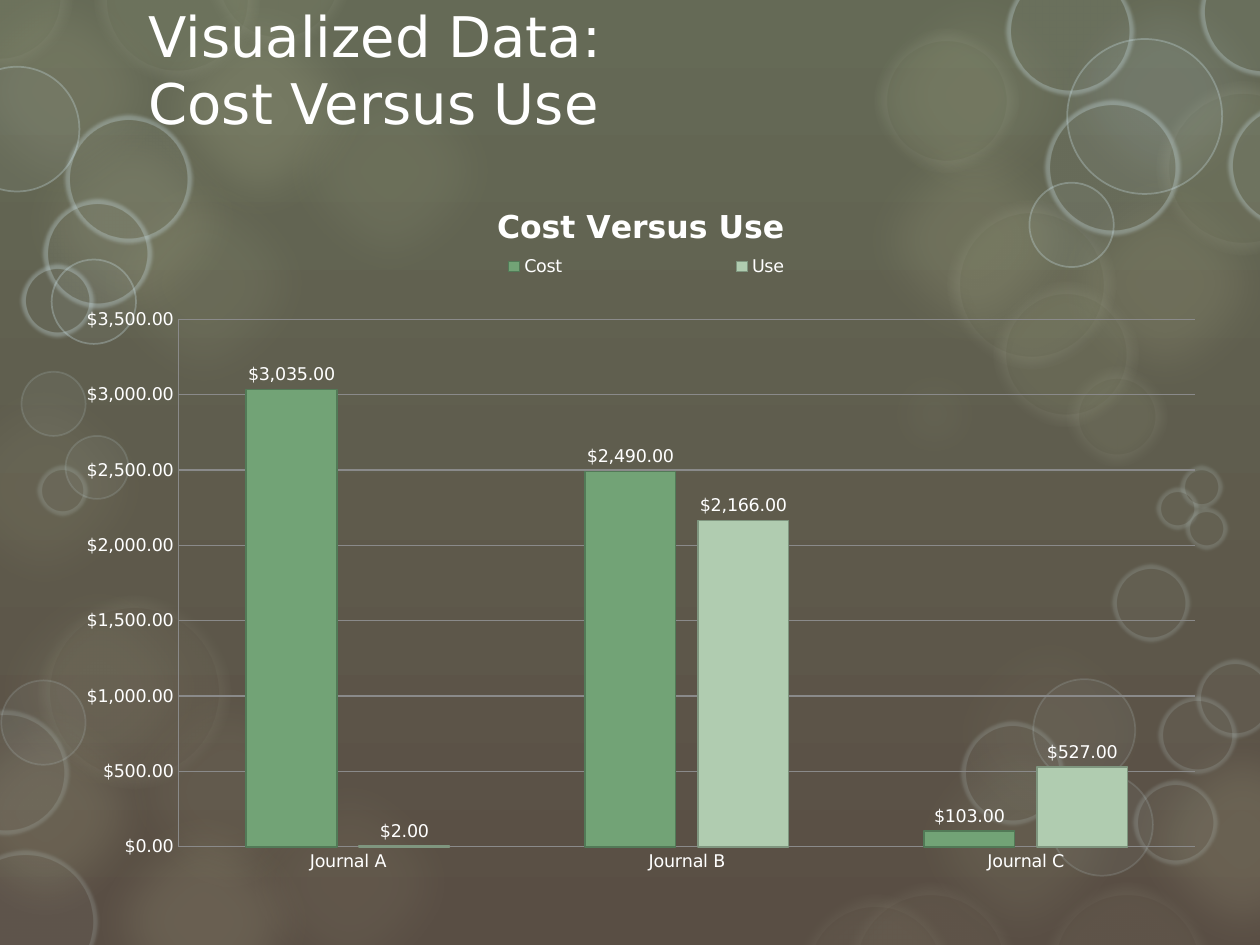
from lxml import etree
from pptx import Presentation
from pptx.chart.data import CategoryChartData
from pptx.dml.color import RGBColor
from pptx.enum.chart import XL_CHART_TYPE, XL_LABEL_POSITION, XL_LEGEND_POSITION, XL_TICK_MARK
from pptx.enum.shapes import MSO_SHAPE
from pptx.enum.text import MSO_ANCHOR, MSO_AUTO_SIZE, PP_ALIGN
from pptx.oxml.ns import qn
from pptx.util import Cm, Pt

COLUMNS = XL_CHART_TYPE.COLUMN_CLUSTERED
OUTSIDE_END = XL_LABEL_POSITION.OUTSIDE_END
LEGEND_TOP = XL_LEGEND_POSITION.TOP
NO_TICK = XL_TICK_MARK.NONE
ELLIPSE = MSO_SHAPE.OVAL
MIDDLE = MSO_ANCHOR.MIDDLE
LEFT = PP_ALIGN.LEFT
NO_AUTOFIT = MSO_AUTO_SIZE.NONE

FONT = "DejaVu Sans"
MONEY = '"$"#,##0.00'
COLORS = {
    "top": "656A56", "bottom": "594E44", "text": "FFFFFF", "grid": "8A8A8A",
    "olive": "BDC097", "ice": "CBE1E7", "pale": "F2F3EB",
    "cost": "72A376", "cost_edge": "527A57", "use": "B0CCB0", "use_edge": "7F967F",
}
TITLE_LINES = ["Visualized Data:", "Cost Versus Use"]
TITLE_BOX = (1.08, 0.04, 7.79, 1.01)
CHART_TITLE = "Cost Versus Use"
CHART_BOX = (0.5, 1.42, 9.17, 5.58)
CATEGORIES = ["Journal A", "Journal B", "Journal C"]
SERIES = [
    ("Cost", (3035, 2490, 103), "cost", "cost_edge"),
    ("Use", (2, 2166, 527), "use", "use_edge"),
]
PLOT_LAYOUT = {"x": 0.1, "y": 0.2, "w": 0.88, "h": 0.75}
LEGEND_LAYOUT = {"x": 0.24, "y": 0.1, "w": 0.53, "h": 0.05}

STYLES = {
    "glow": {"line": None, "width": 0, "softness": 25},
    "haze": {"line": "pale", "width": 14, "softness": 9},
    "ring": {"line": "ice", "width": 1, "softness": 0},
    "blur": {"line": "ice", "width": 5, "softness": 2},
}
BUBBLES = [
    ("glow", "olive", 8, 0, [
        (-0.26, 4.42, 2.09), (0.77, 5.24, 2.09), (1.73, 5.96, 2.09), (-0.7, 2.82, 2.09)]),
    ("glow", "olive", 10, 0, [
        (0.57, 1.2, 2.09), (2.05, 0.31, 2.09), (6.69, -0.29, 2.09), (7.06, 5.62, 2.09),
        (6.75, 2.62, 1.33)]),
    ("glow", "olive", 16, 0, [(0.57, 6.27, 2.09), (8.81, 5.62, 2.09), (-0.69, 5.41, 2.09)]),
    ("glow", "olive", 14, 0, [(-0.56, -0.32, 2.09)]),
    ("glow", "olive", 20, 0, [(1.01, -0.18, 2.09)]),
    ("glow", "olive", 15, 0, [(0, 0.72, 2.09), (8.2, 1.2, 2.09), (6.69, 0.86, 2.09)]),
    ("glow", "ice", 10, 0, [(8.2, -0.32, 2.09)]),
    ("glow", "olive", 5, 0, [(7.29, 4.77, 2.09)]),
    ("haze", "olive", 10, 6, [
        (9.18, 0.65, 1.37), (6.94, 0.23, 1.14), (7.52, 1.59, 1.33), (7.89, 2.24, 1.14),
        (8.47, 2.91, 0.79), (0.75, -0.66, 1.31), (1.64, -0.75, 1.14), (-0.57, -0.58, 1.14)]),
    ("haze", "olive", 6, 4, [
        (0.3, 4.73, 1.53), (6.32, 7.1, 1.25), (6.7, 7.01, 1.37), (8.28, 7.01, 1.33)]),
    ("ring", "ice", 5, 15, [
        (0.01, 5.4, 0.67), (8.34, 6.14, 0.81), (8.2, 5.39, 0.81), (0.17, 2.95, 0.51),
        (0.52, 3.46, 0.5)]),
    ("blur", "ice", 5, 15, [
        (-0.36, 6.75, 1.13), (-0.44, 5.64, 0.98), (7.63, 5.73, 0.81), (9, 6.2, 0.66),
        (8.83, 4.48, 0.61), (9.2, 5.53, 0.61), (9.5, 5.24, 0.61), (9.37, 3.7, 0.33),
        (9.18, 3.87, 0.33), (9.41, 4.03, 0.33), (0.3, 3.7, 0.39)]),
    ("ring", "ice", 5, 30, [
        (-0.36, 0.53, 0.99), (0.41, 2.06, 0.67), (8.47, 0.31, 1.23), (8.17, 1.45, 0.67)]),
    ("blur", "ice", 5, 30, [
        (0.52, 0.92, 1), (0.35, 1.59, 0.85), (0.17, 2.1, 0.57), (7.99, -0.25, 1),
        (9.53, -0.4, 1), (9.75, 0.82, 0.99), (8.3, 0.8, 1.06)]),
]


def length(inches):
    return Cm(inches * 2.54)


def color(name):
    return RGBColor.from_string(COLORS[name])


def paint(fill, name, opacity=100):
    fill.solid()
    fill.fore_color.rgb = color(name)
    if opacity < 100:
        choice = fill._xPr.find(qn("a:solidFill"))[0]
        etree.SubElement(choice, qn("a:alpha"), val=str(opacity * 1000))


def add_bubble(shapes, circle, look, fill, opacity, line_opacity):
    left, top, diameter = map(length, circle)
    shape = shapes.add_shape(ELLIPSE, left, top, diameter, diameter)
    paint(shape.fill, fill, opacity)
    if look["line"]:
        shape.line.width = Pt(look["width"])
        paint(shape.line.fill, look["line"], line_opacity)
    else:
        shape.line.fill.background()
    shape.shadow.inherit = False
    if look["softness"]:
        effects = shape.element.spPr.find(qn("a:effectLst"))
        etree.SubElement(effects, qn("a:softEdge"), rad=str(Pt(look["softness"])))


def style(font, size, bold=False):
    font.name = FONT
    font.size = Pt(size)
    font.bold = bold
    font.color.rgb = color("text")


def format_title(title):
    title.left, title.top, title.width, title.height = map(length, TITLE_BOX)
    frame = title.text_frame
    frame.word_wrap = True
    frame.auto_size = NO_AUTOFIT
    frame.vertical_anchor = MIDDLE
    paragraph = frame.paragraphs[0]
    paragraph.alignment = LEFT
    for index, line in enumerate(TITLE_LINES):
        if index:
            paragraph.add_line_break()
        run = paragraph.add_run()
        run.text = line
        style(run.font, 32)


def set_layout(element, fractions, inner=False):
    layout = element.find(qn("c:layout"))
    if layout is None:
        layout = etree.Element(qn("c:layout"))
        element.insert(1 if element.tag == qn("c:legend") else 0, layout)
    manual = etree.SubElement(layout, qn("c:manualLayout"))
    if inner:
        etree.SubElement(manual, qn("c:layoutTarget"), val="inner")
    for side in "xy":
        etree.SubElement(manual, qn(f"c:{side}Mode"), val="edge")
    for side, value in fractions.items():
        etree.SubElement(manual, qn(f"c:{side}"), val=str(value))


def add_cost_chart(shapes):
    data = CategoryChartData(number_format=MONEY)
    data.categories = CATEGORIES
    for name, values, _, _ in SERIES:
        data.add_series(name, values)
    chart = shapes.add_chart(COLUMNS, *map(length, CHART_BOX), data).chart
    style(chart.font, 10)
    chart.has_title = True
    run = chart.chart_title.text_frame.paragraphs[0].add_run()
    run.text = CHART_TITLE
    style(run.font, 18, True)
    chart.has_legend = True
    chart.legend.position = LEGEND_TOP
    chart.legend.include_in_layout = False
    set_layout(chart.legend._element, LEGEND_LAYOUT)

    plot = chart.plots[0]
    plot.gap_width = 150
    plot.overlap = -25
    plot.vary_by_categories = False
    for series, (_, _, fill, edge) in zip(plot.series, SERIES):
        paint(series.format.fill, fill)
        paint(series.format.line.fill, edge)
        series.format.line.width = Pt(1)
        labels = series.data_labels
        labels.show_value = True
        labels.number_format = MONEY
        labels.number_format_is_linked = False
        labels.position = OUTSIDE_END
        style(labels.font, 10)

    value_axis = chart.value_axis
    value_axis.minimum_scale, value_axis.maximum_scale, value_axis.major_unit = 0, 3500, 500
    value_axis.has_major_gridlines = True
    value_axis.tick_labels.number_format = MONEY
    value_axis.tick_labels.number_format_is_linked = False
    for axis in (chart.category_axis, value_axis):
        axis.major_tick_mark = axis.minor_tick_mark = NO_TICK
    for part in (chart.category_axis, value_axis, value_axis.major_gridlines):
        paint(part.format.line.fill, "grid")
        part.format.line.width = Pt(0.75)
    set_layout(chart._chartSpace.chart.plotArea, PLOT_LAYOUT, True)


def main():
    presentation = Presentation()
    presentation.slide_width, presentation.slide_height = length(10), length(7.5)
    slide = presentation.slides.add_slide(presentation.slide_layouts[5])
    background = slide.background.fill
    background.gradient()
    background.gradient_angle = 270
    for stop, name in zip(background.gradient_stops, ("top", "bottom")):
        stop.color.rgb = color(name)
    for look, fill, opacity, line_opacity, circles in BUBBLES:
        for circle in circles:
            add_bubble(slide.shapes, circle, STYLES[look], fill, opacity, line_opacity)
    title = slide.shapes.title
    format_title(title)
    slide.shapes.element.append(title.element)
    add_cost_chart(slide.shapes)
    presentation.save("out.pptx")


if __name__ == "__main__":
    main()
